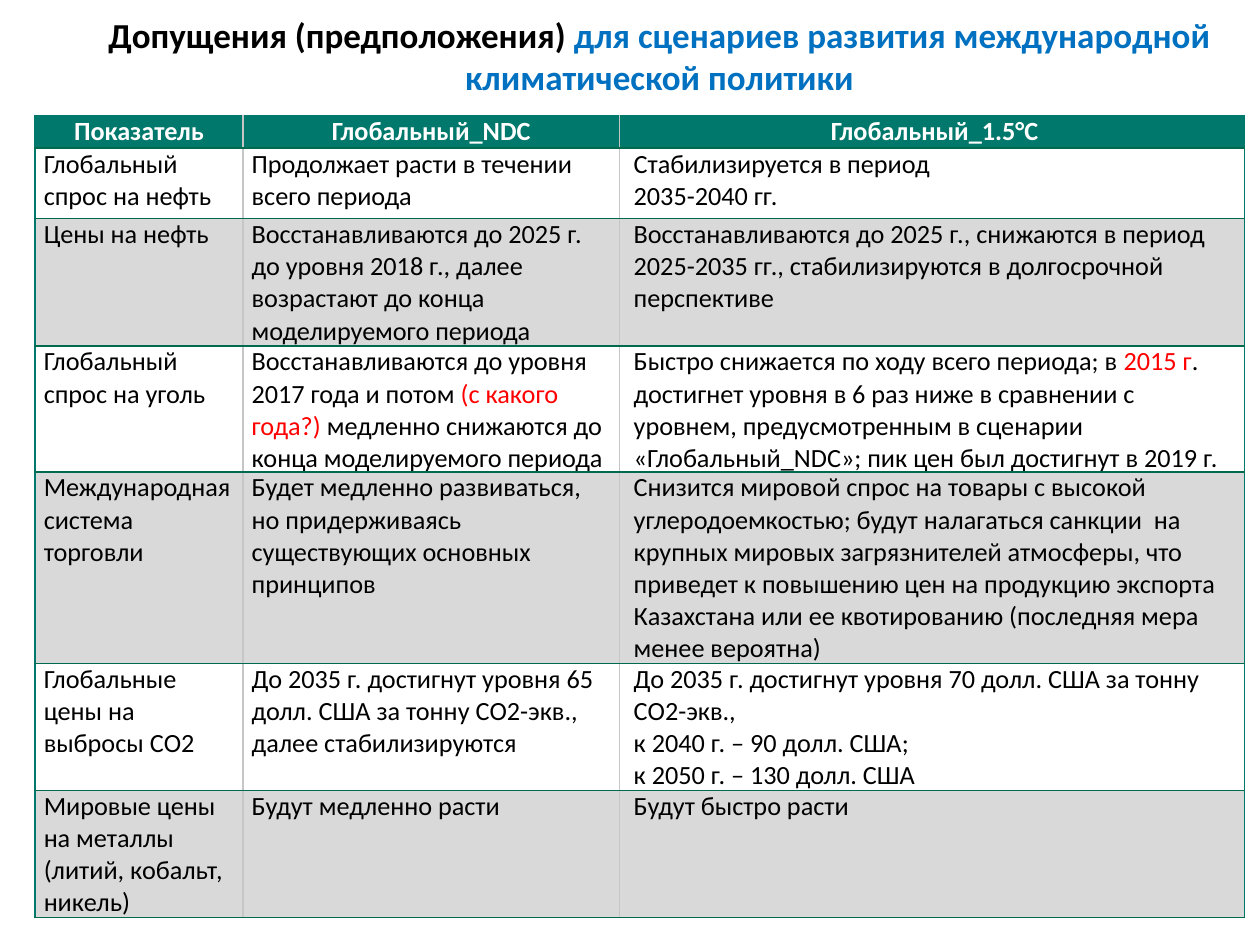
import pptx
import pptx.dml.color
import pptx.enum.text
import pptx.oxml
import pptx.oxml.ns
import pptx.util

Pt = pptx.util.Pt
Align = pptx.enum.text.PP_ALIGN
Anchor = pptx.enum.text.MSO_ANCHOR
GREEN, DARK, SILVER = "00786B", "006A4E", "C6C6C6"
GREY, WHITE, BLACK, BLUE, RED = "D9D9D9", "FFFFFF", "000000", "0070C0", "FF0000"

TITLE = [
    ("Допущения (предположения) ", BLACK),
    ("для сценариев развития международной климатической политики", BLUE),
]
WIDTHS = [118.8, 215.3, 357.1]
HEIGHTS = [18.7, 40.3, 72.7, 72, 109.4, 72.7, 72.7]
ROWS = [
    ["Показатель", "Глобальный_NDC", "Глобальный_1.5°C"],
    ["Глобальный спрос на нефть",
     "Продолжает расти в течении всего периода",
     "Стабилизируется в период \n2035-2040 гг."],
    ["Цены на нефть",
     "Восстанавливаются до 2025 г. до уровня 2018 г., далее возрастают "
     "до конца моделируемого периода",
     "Восстанавливаются до 2025 г., снижаются в период 2025-2035 гг., "
     "стабилизируются в долгосрочной перспективе"],
    ["Глобальный спрос на уголь",
     [("Восстанавливаются до уровня 2017 года и потом ", BLACK),
      ("(с какого года?) ", RED),
      ("медленно снижаются до конца моделируемого периода", BLACK)],
     [("Быстро снижается по ходу всего периода; в ", BLACK),
      ("2015 г", RED),
      (". достигнет уровня в 6 раз ниже в сравнении с уровнем, "
       "предусмотренным в сценарии «Глобальный_NDC»; "
       "пик цен был достигнут в 2019 г.", BLACK)]],
    ["Международная система торговли",
     "Будет медленно развиваться, но придерживаясь существующих "
     "основных принципов",
     "Снизится мировой спрос на товары с высокой углеродоемкостью; "
     "будут налагаться санкции  на крупных мировых загрязнителей атмосферы, "
     "что приведет к повышению цен на продукцию экспорта Казахстана "
     "или ее квотированию (последняя мера менее вероятна)"],
    ["Глобальные цены на выбросы СО2",
     "До 2035 г. достигнут уровня 65 долл. США за тонну СО2-экв., "
     "далее стабилизируются",
     "До 2035 г. достигнут уровня 70 долл. США за тонну СО2-экв.,\n"
     "к 2040 г. – 90 долл. США;\nк 2050 г. – 130 долл. США"],
    ["Мировые цены на металлы (литий, кобальт, никель)",
     "Будут медленно расти",
     "Будут быстро расти"],
]


def color(code):
    return pptx.dml.color.RGBColor.from_string(code)


class Deck:
    font = "Calibri"

    def __init__(self, width, height):
        self.show = pptx.Presentation()
        self.show.slide_width, self.show.slide_height = Pt(width), Pt(height)
        self.slide = self.show.slides.add_slide(self.show.slide_layouts[6])

    def text(self, para, runs, size, bold):
        for words, code in runs:
            for i, line in enumerate(words.split("\n")):
                if i:
                    para.add_line_break()
                run = para.add_run()
                run.text = line
                run.font.name = self.font
                run.font.size = Pt(size)
                run.font.bold = bold
                run.font.color.rgb = color(code)

    def title(self, left, top, width, height, runs):
        box = self.slide.shapes.add_textbox(Pt(left), Pt(top), Pt(width), Pt(height))
        frame = box.text_frame
        frame.word_wrap = True
        frame.vertical_anchor = Anchor.MIDDLE
        para = frame.paragraphs[0]
        para.alignment = Align.CENTER
        self.text(para, runs, 20, True)

    def edge(self, cell, side, code):
        line = pptx.oxml.parse_xml(
            f'<a:ln{side} {pptx.oxml.ns.nsdecls("a")} w="12700"><a:solidFill>'
            f'<a:srgbClr val="{code}"/></a:solidFill></a:ln{side}>')
        cell._tc.get_or_add_tcPr().append(line)

    def cell(self, cell, body, head, fill, first, last):
        cell.margin_left = cell.margin_right = Pt(5)
        cell.margin_top = cell.margin_bottom = 0
        self.edge(cell, "L", GREEN if first else SILVER)
        self.edge(cell, "R", GREEN if last else SILVER)
        self.edge(cell, "T", GREEN if head else DARK)
        self.edge(cell, "B", DARK)
        if fill:
            cell.fill.solid()
            cell.fill.fore_color.rgb = color(fill)
        else:
            cell.fill.background()
        para = cell.text_frame.paragraphs[0]
        para.alignment = Align.CENTER if head else Align.LEFT
        para.space_before = para.space_after = Pt(3)
        if last:
            para._p.get_or_add_pPr().set("marL", str(Pt(3)))
        runs = [(body, WHITE if head else BLACK)] if isinstance(body, str) else body
        self.text(para, runs, 15, head)

    def table(self, left, top, widths, heights, rows):
        grid = self.slide.shapes.add_table(
            len(rows), len(widths), Pt(left), Pt(top),
            Pt(sum(widths)), Pt(sum(heights))).table
        grid.horz_banding = False
        for col, width in zip(grid.columns, widths):
            col.width = Pt(width)
        for r, row in enumerate(rows):
            grid.rows[r].height = Pt(heights[r])
            fill = GREEN if r == 0 else None if r % 2 else GREY
            for c, body in enumerate(row):
                self.cell(grid.cell(r, c), body, r == 0, fill,
                          c == 0, c == len(widths) - 1)


def main():
    deck = Deck(720, 540)
    deck.title(33.8, 11.5, 686.2, 41, TITLE)
    deck.table(20, 66, WIDTHS, HEIGHTS, ROWS)
    deck.show.save("out.pptx")


if __name__ == "__main__":
    main()
